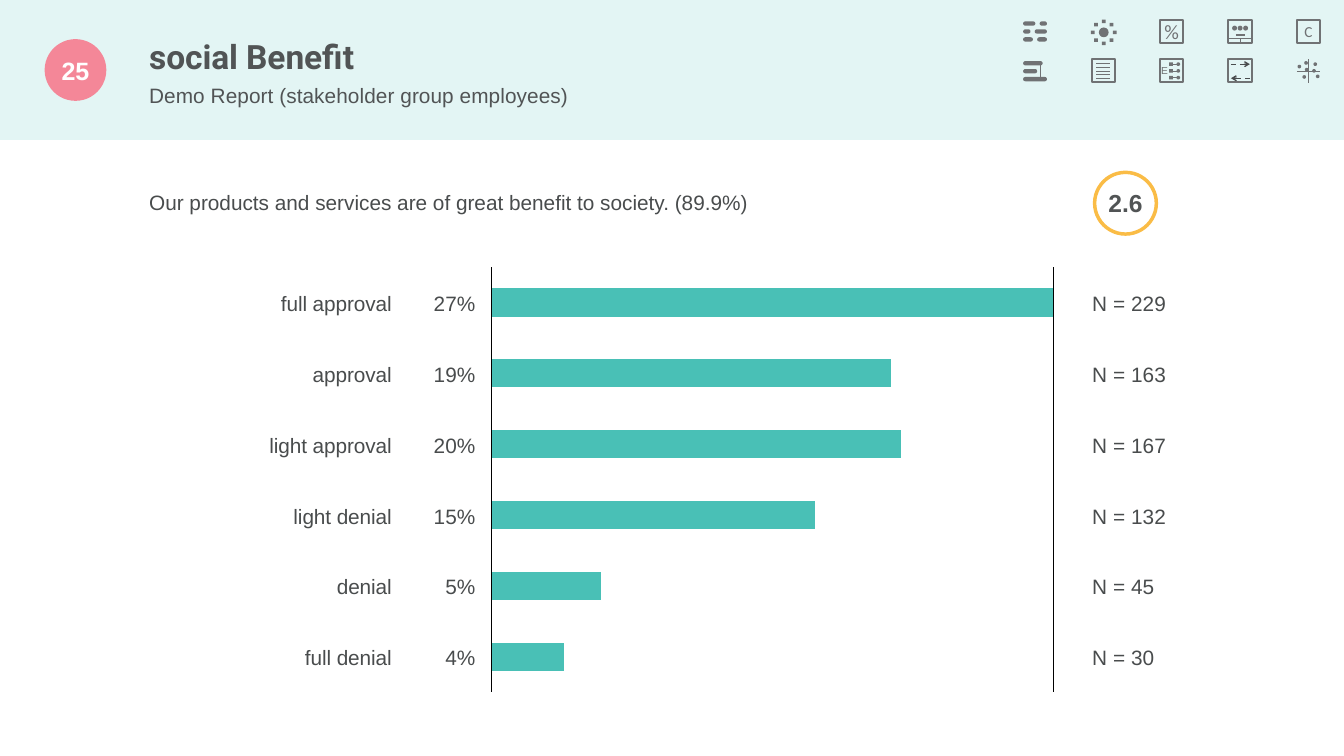
from dataclasses import dataclass
from math import cos, pi, sin
from typing import NamedTuple

from lxml import etree
from pptx import Presentation
from pptx.chart.data import CategoryChartData
from pptx.dml.color import RGBColor
from pptx.enum.chart import XL_CHART_TYPE
from pptx.enum.dml import MSO_LINE
from pptx.enum.shapes import MSO_CONNECTOR, MSO_SHAPE
from pptx.enum.text import MSO_ANCHOR, MSO_AUTO_SIZE, PP_ALIGN
from pptx.oxml.ns import qn
from pptx.util import Inches, Pt

RECTANGLE, ELLIPSE, PILL = MSO_SHAPE.RECTANGLE, MSO_SHAPE.OVAL, MSO_SHAPE.ROUNDED_RECTANGLE
STRAIGHT, DASH = MSO_CONNECTOR.STRAIGHT, MSO_LINE.DASH
LEFT, CENTER, RIGHT = PP_ALIGN.LEFT, PP_ALIGN.CENTER, PP_ALIGN.RIGHT
TOP, MIDDLE = MSO_ANCHOR.TOP, MSO_ANCHOR.MIDDLE

TEAL, PINK, AMBER, WHITE, BLACK = "49C0B6", "F48798", "FABC46", "FFFFFF", "000000"
HEADING, INK, ICON = "515455", "494C4D", "707274"

# Grids, in inches
SLIDE_WIDTH, SLIDE_HEIGHT = 21.99, 12.37
CHART_LEFT, CHART_TOP, CHART_WIDTH = 8.03, 4.37, 9.2
ROW_HEIGHT, BAR_HEIGHT = 1.16, 0.46
ICON_LEFT, ICON_TOP, ICON_COLUMN, ICON_ROW, ICON_SIZE = 16.74, 0.32, 1.12, 0.65, 0.38
DOT = 0.06


class Box(NamedTuple):
    left: float
    top: float
    width: float
    height: float


class Answer(NamedTuple):
    label: str
    share: str
    count: int


@dataclass
class TextStyle:
    size: float
    color: str = INK
    font: str = "Arial"
    bold: bool = False
    tracking: float = 0
    align: PP_ALIGN = LEFT
    before: float = 0
    line: float | None = None


ANSWERS = [
    Answer("full approval", "27%", 229),
    Answer("approval", "19%", 163),
    Answer("light approval", "20%", 167),
    Answer("light denial", "15%", 132),
    Answer("denial", "5%", 45),
    Answer("full denial", "4%", 30),
]

presentation = Presentation()
presentation.slide_width, presentation.slide_height = Inches(SLIDE_WIDTH), Inches(SLIDE_HEIGHT)
slide = presentation.slides.add_slide(presentation.slide_layouts[5])


def rgb(color: str) -> RGBColor:
    return RGBColor.from_string(color)


def write(shape, lines: list[tuple[str, TextStyle]], anchor=MIDDLE, inset_top: float = 0, wrap=True) -> None:
    frame = shape.text_frame
    frame_format = {"margin_left": 0, "margin_right": 0, "margin_bottom": 0, "margin_top": Inches(inset_top),
                    "vertical_anchor": anchor, "auto_size": MSO_AUTO_SIZE.NONE, "word_wrap": wrap}
    for name, value in frame_format.items():
        setattr(frame, name, value)
    for number, (text, style) in enumerate(lines):
        paragraph = frame.add_paragraph() if number else frame.paragraphs[0]
        paragraph.alignment, paragraph.space_before = style.align, Pt(style.before)
        if style.line:
            paragraph.line_spacing = Pt(style.line)
        run = paragraph.add_run()
        run.text = text
        font_format = {"size": Pt(style.size), "name": style.font, "bold": style.bold}
        for name, value in font_format.items():
            setattr(run.font, name, value)
        run.font.color.rgb = rgb(style.color)
        if style.tracking:
            run.font._element.set("spc", str(round(style.tracking * 100)))


def add_text(box: Box, text: str, style: TextStyle, anchor=MIDDLE) -> None:
    write(slide.shapes.add_textbox(*map(Inches, box)), [(text, style)], anchor, 0.02)


def add_shape(kind, box: Box, fill: str | None = None, line: str | None = None, weight: float = 2.36):
    shape = slide.shapes.add_shape(kind, *map(Inches, box))
    shape.shadow.inherit = False
    if fill:
        shape.fill.solid()
        shape.fill.fore_color.rgb = rgb(fill)
    else:
        shape.fill.background()
    if line:
        shape.line.color.rgb, shape.line.width = rgb(line), Pt(weight)
    else:
        shape.line.fill.background()
    if kind == PILL:
        shape.adjustments[0] = 0.5
    return shape


def add_line(x1: float, y1: float, x2: float, y2: float, color: str = ICON, weight: float = 0.87, arrow=False):
    connector = slide.shapes.add_connector(STRAIGHT, *map(Inches, (x1, y1, x2, y2)))
    connector.line.color.rgb, connector.line.width = rgb(color), Pt(weight)
    if arrow:
        connector.line.dash_style = DASH
        etree.SubElement(connector.line._get_or_add_ln(), qn("a:tailEnd"), type="arrow")
    etree.SubElement(connector._element.spPr, qn("a:effectLst"))
    return connector


def icon_origin(column: int, row: int) -> tuple[float, float]:
    return ICON_LEFT + column * ICON_COLUMN, ICON_TOP + row * ICON_ROW


def add_frame(column: int, row: int):
    return add_shape(RECTANGLE, Box(*icon_origin(column, row), ICON_SIZE, ICON_SIZE), line=ICON)


def add_dot(kind, x: float, y: float, size: float = DOT):
    return add_shape(kind, Box(x, y, size, size), ICON)


def add_pills(row: int, pills: list[tuple[float, int, float]]) -> None:
    x, y = icon_origin(0, row)
    for left, line, width in pills:
        add_shape(PILL, Box(x + left, y + 0.03 + 0.13 * line, width, 0.07), ICON)


# Header band, behind the title
band = add_shape(RECTANGLE, Box(0, 0, SLIDE_WIDTH, 2.29), TEAL)
color_element = band._element.spPr.find(qn("a:solidFill"))[0]
etree.SubElement(color_element, qn("a:alpha"), val="15000")
slide.shapes._spTree.insert(2, band._element)

# Title and number
title = slide.shapes.title
title.left, title.top, title.width, title.height = map(Inches, (2.44, 0.42, 14.22, 1.35))
write(title, [
    ("social Benefit", TextStyle(39.5, HEADING, "Roboto", True, -0.1, before=12.2)),
    ("Demo Report (stakeholder group employees)", TextStyle(24.5, HEADING, tracking=0.1, before=7.2)),
], TOP, 0.17)
badge = add_shape(ELLIPSE, Box(0.73, 0.64, 1.01, 1.01), PINK)
write(badge, [("25", TextStyle(29.5, WHITE, bold=True, align=CENTER))])

# Icons: pill lists
add_pills(0, [(0, 0, 0.2), (0.27, 0, 0.12), (0, 1, 0.12), (0.19, 1, 0.2), (0, 2, 0.16), (0.23, 2, 0.16)])
add_pills(1, [(0, 0, 0.32), (0, 1, 0.23), (0, 2, 0.39)])
x, y = icon_origin(0, 1)
add_line(x + 0.29, y + 0.06, x + 0.29, y + 0.32, weight=0.82)

# Icon: sun
x, y = icon_origin(1, 0)
add_dot(ELLIPSE, x + 0.12, y + 0.13, 0.16)
for ray in range(8):
    angle = ray * pi / 4
    add_dot(RECTANGLE, x + 0.17 + 0.18 * cos(angle), y + 0.18 + 0.18 * sin(angle))

# Icons: framed letters
for column, letter, size in [(2, "%", 24), (4, "C", 18)]:
    write(add_frame(column, 0), [(letter, TextStyle(size, ICON, "Calibri", align=CENTER))], wrap=False)

# Icon: audience
x, y = icon_origin(3, 0)
audience = add_frame(3, 0)
add_line(x, y + 0.31, x + ICON_SIZE, y + 0.31)
add_line(x + 0.19, y + 0.31, x + 0.19, y + ICON_SIZE).end_connect(audience, 2)
for head in range(3):
    add_dot(ELLIPSE, x + 0.06 + 0.09 * head, y + 0.1, 0.08)
add_line(x + 0.12, y + 0.26, x + 0.27, y + 0.26, weight=2.36)

# Icon: text page
x, y = icon_origin(1, 1)
add_frame(1, 1)
for line in range(7):
    line_y = y + line * ICON_SIZE / 6
    add_line(x + 0.08, line_y, x + 0.31, line_y)

# Icon: linked items
x, y = icon_origin(2, 1)
add_frame(2, 1)
letter_box = slide.shapes.add_textbox(*map(Inches, (x, y, 0.15, ICON_SIZE)))
write(letter_box, [("E", TextStyle(12, ICON, align=CENTER))])
for item in range(3):
    item_y = y + 0.05 + 0.11 * item
    square = add_dot(RECTANGLE, x + 0.15, item_y)
    add_line(x + 0.21, item_y + 0.03, x + 0.27, item_y + 0.03).begin_connect(square, 3)
    add_dot(ELLIPSE, x + 0.27, item_y)

# Icon: opposite arrows
x, y = icon_origin(3, 1)
add_frame(3, 1)
for start, end, level in [(0.04, 0.35, 0.08), (0.35, 0.04, 0.31)]:
    add_line(x + start, y + level, x + end, y + level, INK, 1.5, arrow=True)

# Icon: scatter
x, y = icon_origin(4, 1)
for dot_x, dot_y in [(0.01, 0.09), (0.13, 0.14), (0.27, 0.05), (0.31, 0.25), (0.09, 0.26), (0.12, 0.03), (0.25, 0.16)]:
    add_dot(ELLIPSE, x + dot_x, y + dot_y)
add_line(x, y + 0.19, x + ICON_SIZE, y + 0.19, weight=0.82)
add_line(x + 0.19, y, x + 0.19, y + ICON_SIZE, weight=0.82)

# Question and score
add_text(Box(2.44, 3.09, 14.55, 0.93), "Our products and services are of great benefit to society. (89.9%)",
         TextStyle(24.5, before=1.2), TOP)
score = add_shape(ELLIPSE, Box(17.91, 2.82, 1.01, 1.01), line=AMBER, weight=4.12)
write(score, [("2.6", TextStyle(29, HEADING, bold=True, align=CENTER, before=1.1, line=32.6))], wrap=False)

# Bar chart filling its whole frame
chart_height = ROW_HEIGHT * len(ANSWERS)
data = CategoryChartData()
data.categories = [answer.label for answer in ANSWERS]
data.add_series("N", [answer.count for answer in ANSWERS])
chart_box = Box(CHART_LEFT, CHART_TOP, CHART_WIDTH, chart_height)
chart = slide.shapes.add_chart(XL_CHART_TYPE.BAR_CLUSTERED, *map(Inches, chart_box), data).chart
chart.has_legend = chart.has_title = False
chart.font.size, chart.font.name = Pt(24.5), "Arial"
chart.category_axis.reverse_order = True
chart.value_axis.minimum_scale, chart.value_axis.maximum_scale = 0, max(answer.count for answer in ANSWERS)
for axis in (chart.category_axis, chart.value_axis):
    axis.has_major_gridlines = axis.visible = False
plot = chart.plots[0]
plot.vary_by_categories, plot.gap_width = False, round((ROW_HEIGHT / BAR_HEIGHT - 1) * 100)
plot.series[0].format.fill.solid()
plot.series[0].format.fill.fore_color.rgb = rgb(TEAL)
layout = etree.Element(qn("c:layout"))
manual = etree.SubElement(layout, qn("c:manualLayout"))
for tag, value in [("layoutTarget", "inner"), ("xMode", "edge"), ("yMode", "edge"),
                   ("x", "0"), ("y", "0"), ("w", "1"), ("h", "1")]:
    etree.SubElement(manual, qn(f"c:{tag}"), val=value)
chart._chartSpace.chart.plotArea.insert(0, layout)
for line_x in (CHART_LEFT, CHART_LEFT + CHART_WIDTH):
    add_line(line_x, CHART_TOP, line_x, CHART_TOP + chart_height, BLACK, 0.41)

# Row labels
for row, answer in enumerate(ANSWERS):
    for left, width, text, align, tracking in [(0.49, 5.92, answer.label, RIGHT, -0.1),
                                               (6.34, 1.44, answer.share, RIGHT, 0.1),
                                               (17.87, 2.37, f"N = {answer.count}", LEFT, 0.1)]:
        add_text(Box(left, CHART_TOP + row * ROW_HEIGHT, width, ROW_HEIGHT), text,
                 TextStyle(24.5, tracking=tracking, align=align, before=1.2))

presentation.save("out.pptx")
